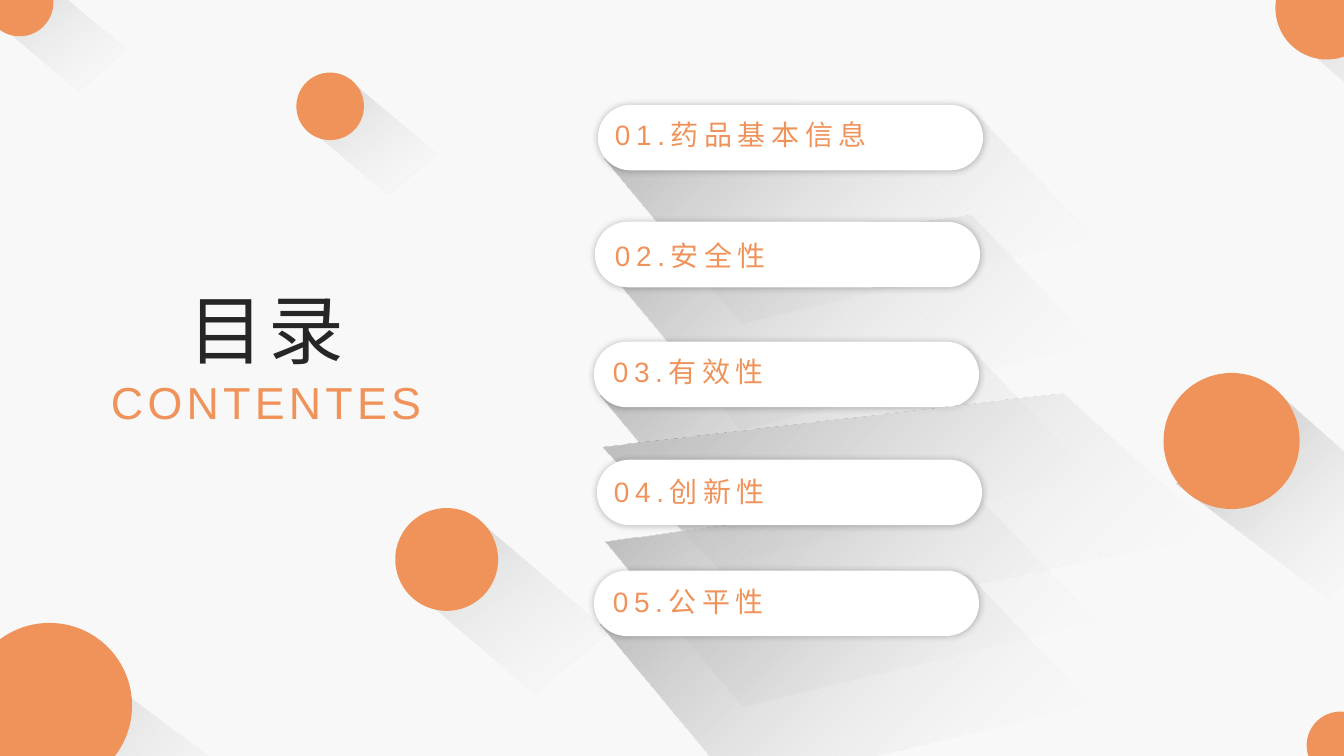
from dataclasses import dataclass

from lxml import etree
from pptx import Presentation
from pptx.dml.color import RGBColor
from pptx.enum.shapes import MSO_SHAPE
from pptx.enum.text import MSO_ANCHOR, MSO_AUTO_SIZE, PP_ALIGN
from pptx.oxml.ns import nsdecls, qn
from pptx.util import Inches, Pt

ELLIPSE, PILL = MSO_SHAPE.OVAL, MSO_SHAPE.ROUNDED_RECTANGLE
LEFT, CENTER = PP_ALIGN.LEFT, PP_ALIGN.CENTER
TOP, GROW = MSO_ANCHOR.TOP, MSO_AUTO_SIZE.SHAPE_TO_FIT_TEXT


@dataclass(frozen=True)
class Theme:
    font: str = "Arial"
    background: str = "F8F8F8"
    accent: str = "EF935B"
    dark: str = "262626"
    white: str = "FFFFFF"
    title: int = 54
    subtitle: int = 32
    item: int = 20
    # Gradient stops: position %, colour, opacity %
    soft_shade: tuple = ((0, "F7FAFD", 0), (63, "CCCDCE", 40), (100, "BFBFBF", 100))
    deep_shade: tuple = ((0, "FFFFFF", 0), (92, "BFBFBF", 100))


@dataclass(frozen=True)
class Box:
    left: float
    top: float
    width: float
    height: float

    def emu(self) -> tuple:
        return tuple(Inches(v) for v in (self.left, self.top, self.width, self.height))


@dataclass(frozen=True)
class Disc:
    left: float
    top: float
    size: float
    rotation: float


@dataclass(frozen=True)
class Item:
    text: str
    pill: tuple
    label: tuple
    shade: tuple


THEME = Theme()

# Shade outlines as fractions of their boxes
DISC_TAIL = ((0, .43), (.1, .35), (.19, .19), (.26, .02), (.34, 0), (1, .53), (.71, 1))
LARGE_TAIL = ((0, .46), (.41, 0), (1, .57), (.66, 1))
ITEM_TAIL = ((0, .23), (.75, 0), (1, .6), (.28, 1))

DISCS = (
    Disc(2.94, 0.72, 0.67, 9.6),
    Disc(3.92, 5.04, 1.02, 10.2),
    Disc(12.65, -0.43, 1.02, 10.2),
    Disc(-0.14, -0.31, 0.67, 9.6),
    Disc(12.96, 7.06, 0.67, 9.6),
)
LARGE_DISCS = (
    (Disc(-0.33, 6.18, 1.64, 0), Box(-0.07, 6.37, 2.21, 2.44), 350.1),
    (Disc(11.54, 3.7, 1.35, 6.4), Box(11.67, 3.9, 2.35, 2.04), 1.8),
)
ITEMS = (
    Item("01.药品基本信息", (5.93, 1.04), (6, 1.12), (6, 1.09)),
    Item("02.安全性", (5.9, 2.2), (6, 2.32), (5.99, 2.14)),
    Item("03.有效性", (5.89, 3.39), (5.98, 3.47), (5.96, 3.44)),
    Item("04.创新性", (5.92, 4.56), (5.99, 4.66), (6.01, 4.89)),
    Item("05.公平性", (5.89, 5.66), (5.98, 5.75), (5.96, 5.71)),
)


def add_solid(slide, kind, box: Box, color: str, rotation: float = 0):
    sp = slide.shapes.add_shape(kind, *box.emu())
    sp.fill.solid()
    sp.fill.fore_color.rgb = RGBColor.from_string(color)
    sp.line.fill.background()
    sp.shadow.inherit = False
    sp.rotation = rotation
    return sp


def add_shade(slide, box: Box, outline: tuple, stops: tuple, rotation: float = 0) -> None:
    points = [(Inches(box.left + x * box.width), Inches(box.top + y * box.height))
              for x, y in outline]
    builder = slide.shapes.build_freeform(*points[0])
    builder.add_line_segments(points[1:], close=True)
    sp = builder.convert_to_shape()
    sp.rotation = rotation
    sp.line.fill.background()
    sp.shadow.inherit = False
    sp.fill.background()
    gradient = "".join(
        f'<a:gs pos="{pos * 1000}"><a:srgbClr val="{color}">'
        f'<a:alpha val="{alpha * 1000}"/></a:srgbClr></a:gs>'
        for pos, color, alpha in stops)
    sp_pr = sp._element.spPr
    sp_pr.replace(sp_pr.find(qn("a:noFill")), etree.fromstring(
        f'<a:gradFill {nsdecls("a")} rotWithShape="1"><a:gsLst>{gradient}</a:gsLst>'
        '<a:lin ang="13500000" scaled="0"/></a:gradFill>'))


def add_glow(sp) -> None:
    effects = sp._element.spPr.find(qn("a:effectLst"))
    effects.append(etree.fromstring(
        f'<a:outerShdw {nsdecls("a")} blurRad="{Pt(5)}" dist="0" dir="0" algn="ctr" '
        'rotWithShape="0"><a:srgbClr val="000000"><a:alpha val="24000"/></a:srgbClr>'
        '</a:outerShdw>'))


def write(sp, box: Box, text: str, size: int, color: str, spacing: int, align) -> None:
    sp.left, sp.top, sp.width, sp.height = box.emu()
    tf = sp.text_frame
    tf.word_wrap = True
    tf.auto_size = GROW
    tf.vertical_anchor = TOP
    p = tf.paragraphs[0]
    p.text = text
    p.alignment = align
    p.font.name = THEME.font
    p.font.size = Pt(size)
    p.font.color.rgb = RGBColor.from_string(color)
    p._p.pPr.find(qn("a:defRPr")).set("spc", str(spacing * 100))


def add_disc(slide, disc: Disc) -> None:
    box = Box(disc.left, disc.top, disc.size, disc.size)
    add_solid(slide, ELLIPSE, box, THEME.accent, disc.rotation)


def add_item(slide, item: Item) -> None:
    add_shade(slide, Box(*item.shade, 4.85, 2.12), ITEM_TAIL, THEME.deep_shade)
    pill = add_solid(slide, PILL, Box(*item.pill, 3.82, 0.65), THEME.white)
    pill.adjustments[0] = 0.5
    add_glow(pill)
    box = Box(*item.label, 3.65, 0.38)
    label = slide.shapes.add_textbox(*box.emu())
    write(label, box, item.text, THEME.item, THEME.accent, 4, LEFT)


def main() -> None:
    prs = Presentation()
    prs.slide_width, prs.slide_height = Inches(13.33), Inches(7.5)
    slide = prs.slides.add_slide(prs.slide_layouts[5])
    slide.background.fill.solid()
    slide.background.fill.fore_color.rgb = RGBColor.from_string(THEME.background)

    # Heading
    write(slide.shapes.title, Box(1.24, 2.76, 2.81, 1.01), "目录",
          THEME.title, THEME.dark, 3, CENTER)
    box = Box(0.97, 3.67, 3.34, 0.64)
    write(slide.shapes.add_textbox(*box.emu()), box, "CONTENTES",
          THEME.subtitle, THEME.accent, 3, CENTER)

    # Discs with long shades
    for disc in DISCS:
        d = disc.size
        tail = Box(disc.left + .02 * d, disc.top + .22 * d, 2.08 * d, 1.52 * d)
        add_shade(slide, tail, DISC_TAIL, THEME.soft_shade, disc.rotation)
        add_disc(slide, disc)
    for disc, tail, rotation in LARGE_DISCS:
        add_shade(slide, tail, LARGE_TAIL, THEME.deep_shade, rotation)
        add_disc(slide, disc)

    # Contents list, with a wide shade behind the last two items
    for item in ITEMS[:3]:
        add_item(slide, item)
    add_shade(slide, Box(5.98, 3.9, 6.08, 2.31), ITEM_TAIL, THEME.deep_shade)
    for item in ITEMS[3:]:
        add_item(slide, item)

    prs.save("out.pptx")


if __name__ == "__main__":
    main()
